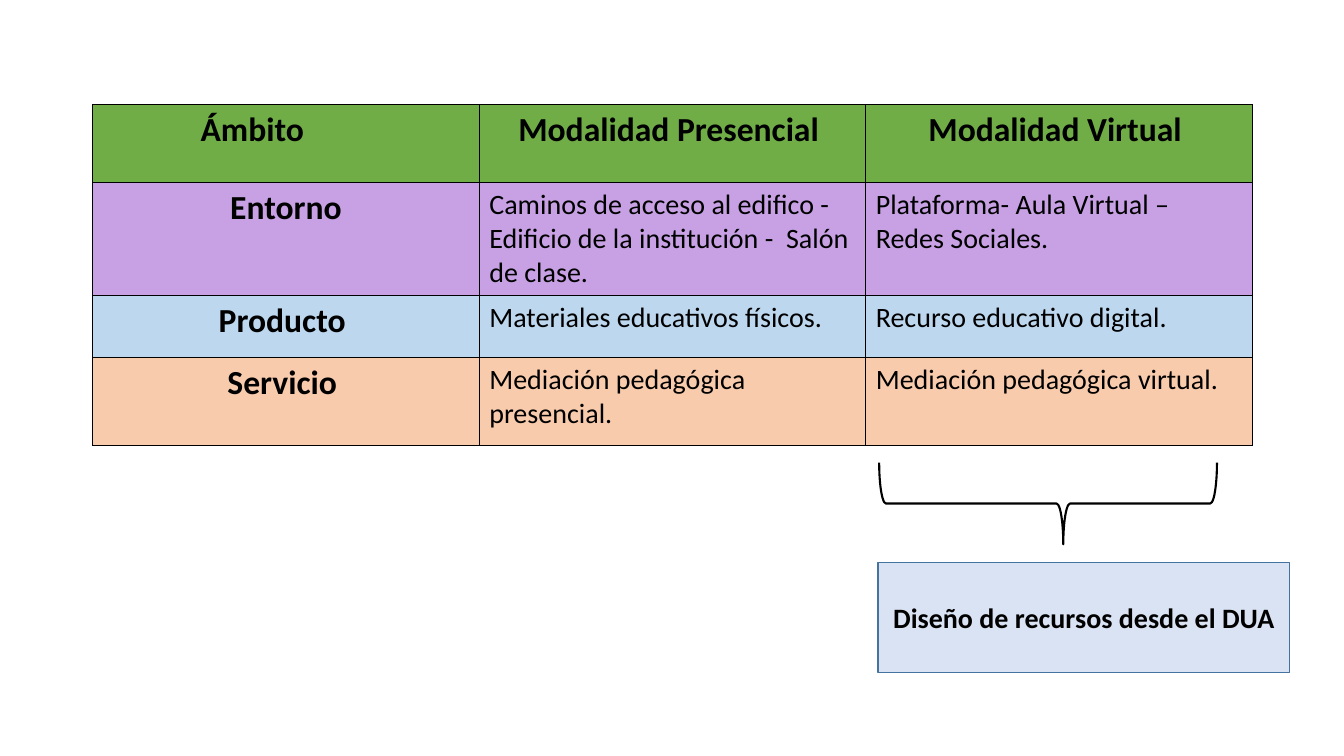
"""Build a slide comparing in-person and virtual modalities by scope."""
from lxml.etree import SubElement
from pptx import Presentation
from pptx.dml.color import RGBColor
from pptx.enum.shapes import MSO_SHAPE
from pptx.enum.text import MSO_ANCHOR, PP_ALIGN
from pptx.oxml.ns import qn
from pptx.util import Inches, Pt

BLACK = RGBColor(0x00, 0x00, 0x00)
GREEN = RGBColor(0x70, 0xAD, 0x47)
PURPLE = RGBColor(0xC7, 0xA1, 0xE3)
SKY = RGBColor(0xBD, 0xD7, 0xEE)
PEACH = RGBColor(0xF8, 0xCB, 0xAD)
PALE_BLUE = RGBColor(0xDA, 0xE3, 0xF3)
STEEL = RGBColor(0x43, 0x73, 0x9E)

MODALITIES = [
    (GREEN, 0.77, "Ámbito", "Modalidad Presencial ", "Modalidad Virtual "),
    (PURPLE, 1.12, "Entorno",
     "Caminos de acceso al edifico - Edificio de la institución -  Salón de clase.",
     "Plataforma- Aula Virtual – Redes Sociales."),
    (SKY, 0.62, "Producto ", "Materiales educativos físicos.",
     "Recurso educativo digital."),
    (PEACH, 0.87, "Servicio ", "Mediación pedagógica presencial.",
     "Mediación pedagógica virtual."),
]


def write(frame, text, size=20, bold=False, align=PP_ALIGN.LEFT):
    frame.word_wrap = True
    paragraph = frame.paragraphs[0]
    paragraph.alignment = align
    run = paragraph.add_run()
    run.text = text
    run.font.name = "Calibri"
    run.font.size = Pt(size)
    run.font.bold = bold
    run.font.color.rgb = BLACK


class ModalitySlide:
    def __init__(self, slide, border=1):
        self.slide = slide
        self.border = border

    def outline(self, cell):
        properties = cell._tc.get_or_add_tcPr()
        for position, side in enumerate(("lnL", "lnR", "lnT", "lnB")):
            edge = SubElement(properties, qn(f"a:{side}"), w=str(Pt(self.border)))
            paint = SubElement(edge, qn("a:solidFill"))
            SubElement(paint, qn("a:srgbClr"), val=str(BLACK))
            properties.insert(position, edge)

    def table(self, rows, left, top, width):
        height = sum(row[1] for row in rows)
        grid = self.slide.shapes.add_table(
            len(rows), 3, Inches(left), Inches(top), Inches(width), Inches(height)
        ).table
        for row_index, (fill, row_height, *texts) in enumerate(rows):
            grid.rows[row_index].height = Inches(row_height)
            for column, text in enumerate(texts):
                cell = grid.cell(row_index, column)
                heading = row_index == 0 or column == 0
                write(cell.text_frame, text, size=24 if heading else 20, bold=heading,
                      align=PP_ALIGN.CENTER if heading else PP_ALIGN.LEFT)
                cell.fill.solid()
                cell.fill.fore_color.rgb = fill
                self.outline(cell)
        return grid

    def shape(self, kind, left, top, width, height, line, weight, fill=None):
        figure = self.slide.shapes.add_shape(
            kind, Inches(left), Inches(top), Inches(width), Inches(height))
        figure.shadow.inherit = False
        figure.line.color.rgb = line
        figure.line.width = Pt(weight)
        if fill is None:
            figure.fill.background()
        else:
            figure.fill.solid()
            figure.fill.fore_color.rgb = fill
        return figure

    def brace(self, left, top, width, height):
        figure = self.shape(MSO_SHAPE.LEFT_BRACE, left, top, width, height, BLACK, 1.5)
        figure.rotation = 270
        figure.adjustments[0] = 0.083
        figure.adjustments[1] = 0.545

    def box(self, text, left, top, width, height):
        figure = self.shape(MSO_SHAPE.RECTANGLE, left, top, width, height,
                            STEEL, 1, PALE_BLUE)
        figure.text_frame.vertical_anchor = MSO_ANCHOR.MIDDLE
        write(figure.text_frame, text, bold=True, align=PP_ALIGN.CENTER)


def main():
    deck = Presentation()
    deck.slide_width, deck.slide_height = Inches(13.33), Inches(7.5)
    page = ModalitySlide(deck.slides.add_slide(deck.slide_layouts[6]))
    modalities = page.table(MODALITIES, 0.92, 1.04, 11.5)
    scope = modalities.cell(0, 0)
    scope.text_frame.paragraphs[0].alignment = PP_ALIGN.LEFT
    scope.margin_left = Inches(1.07)
    page.brace(9.99, 3.32, 0.81, 3.35)
    page.box("Diseño de recursos desde el DUA", 8.71, 5.58, 4.08, 1.09)
    deck.save("out.pptx")


if __name__ == "__main__":
    main()
